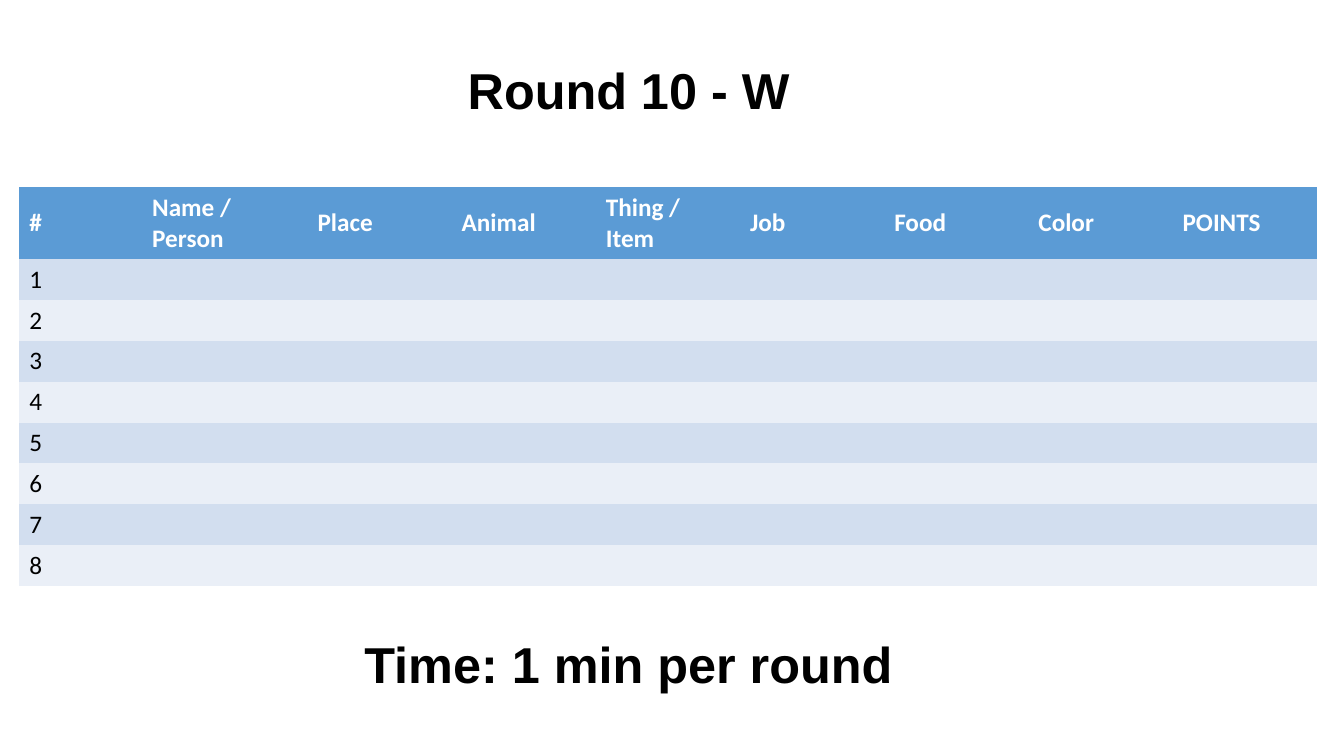
"""Build the score sheet slide for round 10 of a word game."""
from dataclasses import dataclass

from pptx import Presentation
from pptx.dml.color import RGBColor as Rgb
from pptx.enum.text import MSO_ANCHOR as Anchor, MSO_AUTO_SIZE as AutoSize, PP_ALIGN as Align
from pptx.oxml.ns import qn
from pptx.slide import Slide
from pptx.text.text import _Paragraph as Paragraph
from pptx.util import Emu, Pt

EMU_PER_PX = 9144
PLAIN_STYLE = "{2D5ABB26-0587-4C30-8999-92F81FD0307C}"


@dataclass(frozen=True)
class Theme:
    ink: str = "000000"
    paper: str = "FFFFFF"
    header: str = "5B9BD5"
    bands: tuple[str, str] = ("D2DEEF", "EAEFF7")
    heading_font: str = "Arial"
    table_font: str = "Calibri"
    heading_size: int = 36
    table_size: int = 18


@dataclass(frozen=True)
class Heading:
    text: str
    top: int
    left: int = 310
    width: int = 627
    height: int = 71


@dataclass(frozen=True)
class Category:
    title: str
    width: int = 143


THEME = Theme()
HEADINGS = (Heading("Round 10 - W", 53), Heading("Time: 1 min per round", 623))
CATEGORIES = (
    Category("#", 122),
    Category("Name / Person", 164),
    Category("Place"),
    Category("Animal"),
    Category("Thing / Item"),
    Category("Job"),
    Category("Food"),
    Category("Color"),
    Category("POINTS"),
)
TURNS = 8
SHEET_LEFT, SHEET_TOP, ROW_HEIGHT = 19, 186, 39


def px(length: int) -> Emu:
    return Emu(length * EMU_PER_PX)


def write(paragraph: Paragraph, text: str, color: str, **formats: object) -> None:
    run = paragraph.add_run()
    run.text = text
    run.font.color.rgb = Rgb.from_string(color)
    for attribute, value in formats.items():
        setattr(run.font, attribute, value)


def draw_heading(slide: Slide, heading: Heading) -> None:
    box = slide.shapes.add_textbox(
        px(heading.left), px(heading.top), px(heading.width), px(heading.height)
    )
    frame = box.text_frame
    layout = {
        "word_wrap": True,
        "auto_size": AutoSize.SHAPE_TO_FIT_TEXT,
        "vertical_anchor": Anchor.MIDDLE,
    }
    for attribute, value in layout.items():
        setattr(frame, attribute, value)
    line = frame.paragraphs[0]
    line.alignment = Align.CENTER
    write(line, heading.text, THEME.ink, name=THEME.heading_font,
          size=Pt(THEME.heading_size), bold=True)


def draw_score_sheet(slide: Slide) -> None:
    rows = [[category.title for category in CATEGORIES]]
    rows += [[str(turn)] + [""] * (len(CATEGORIES) - 1) for turn in range(1, TURNS + 1)]
    sheet = slide.shapes.add_table(
        len(rows), len(CATEGORIES), px(SHEET_LEFT), px(SHEET_TOP),
        px(sum(category.width for category in CATEGORIES)), px(ROW_HEIGHT * len(rows)),
    )
    sheet._element.find(".//" + qn("a:tableStyleId")).text = PLAIN_STYLE
    for column, category in zip(sheet.table.columns, CATEGORIES):
        column.width = px(category.width)
    for index, (row, entries) in enumerate(zip(sheet.table.rows, rows)):
        row.height = px(ROW_HEIGHT)
        is_header = index == 0
        fill = THEME.header if is_header else THEME.bands[(index - 1) % 2]
        for cell, entry in zip(row.cells, entries):
            cell.fill.solid()
            cell.fill.fore_color.rgb = Rgb.from_string(fill)
            cell.vertical_anchor = Anchor.MIDDLE
            if entry:
                write(cell.text_frame.paragraphs[0], entry,
                      THEME.paper if is_header else THEME.ink,
                      name=THEME.table_font, size=Pt(THEME.table_size), bold=is_header)


def main() -> None:
    deck = Presentation()
    deck.slide_width, deck.slide_height = px(1333), px(750)
    slide = deck.slides.add_slide(deck.slide_layouts[6])
    draw_score_sheet(slide)
    for heading in HEADINGS:
        draw_heading(slide, heading)
    deck.save("out.pptx")


if __name__ == "__main__":
    main()
